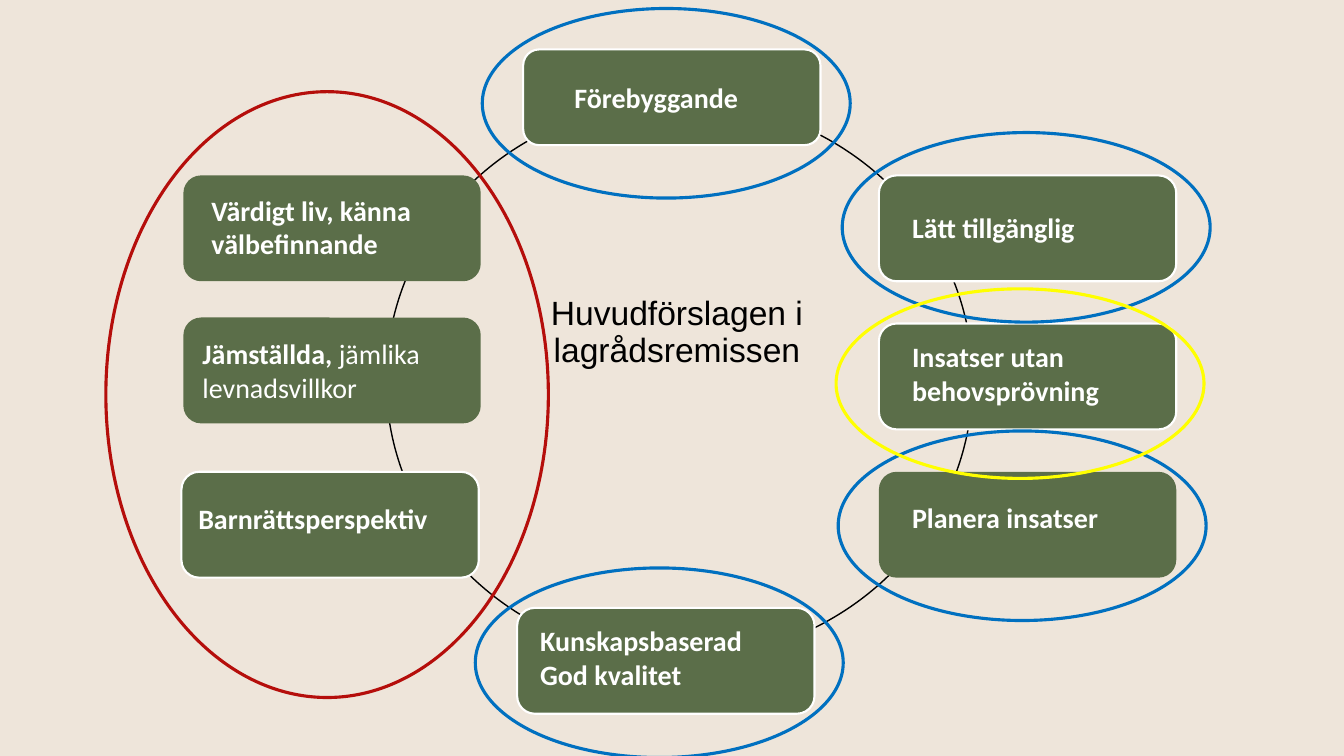
from dataclasses import dataclass

from pptx import Presentation
from pptx.dml.color import RGBColor
from pptx.enum.shapes import MSO_SHAPE as Shape
from pptx.enum.text import PP_ALIGN as Align
from pptx.util import Pt


@dataclass(frozen=True)
class Theme:
    background: str = "EEE5DA"
    card: str = "5B6E49"
    white: str = "FFFFFF"
    black: str = "000000"
    red: str = "B50E0B"
    blue: str = "0070C0"
    yellow: str = "FFFF00"
    title_font: str = "Arial"
    card_font: str = "Calibri"
    title_size: int = 24
    card_size: int = 20
    ring_width: float = 1
    card_border: float = 1.5
    marker_width: float = 2.25


theme = Theme()


def add_outline(kind, area, fill=None, line=None, width=1):
    """Draw a shape; a missing fill or line colour means none."""
    shape = page.shapes.add_shape(kind, *map(Pt, area))
    shape.shadow.inherit = False
    if fill:
        shape.fill.solid()
        shape.fill.fore_color.rgb = RGBColor.from_string(fill)
    else:
        shape.fill.background()
    if line:
        shape.line.color.rgb = RGBColor.from_string(line)
        shape.line.width = Pt(width)
    else:
        shape.line.fill.background()


def add_text(area, lines, font, size, color):
    """Write lines made of (text, bold) spans and return the text frame."""
    frame = page.shapes.add_textbox(*map(Pt, area)).text_frame
    frame.word_wrap = True
    for number, spans in enumerate(lines):
        para = frame.add_paragraph() if number else frame.paragraphs[0]
        for text, bold in spans:
            span = para.add_run()
            span.text = text
            span.font.name = font
            span.font.size = Pt(size)
            span.font.bold = bold
            span.font.color.rgb = RGBColor.from_string(color)
    return frame


deck = Presentation()
deck.slide_width, deck.slide_height = Pt(960), Pt(540)
page = deck.slides.add_slide(deck.slide_layouts[6])
page.background.fill.solid()
page.background.fill.fore_color.rgb = RGBColor.from_string(theme.background)

# Ring and title
add_outline(Shape.OVAL, (275.8, 72, 419, 398.9), line=theme.black, width=theme.ring_width)
title = add_text((377.3, 200, 212.4, 169), [[("Huvudförslagen i lagrådsremissen", False)]],
                 theme.title_font, theme.title_size, theme.black)
title.margin_top = Pt(12)
title.paragraphs[0].alignment = Align.CENTER
title.paragraphs[0].line_spacing = 0.9

# Cards: left, top, height, bordered, text left, text top, text width, lines
card_width, card_height = 212.4, 75.6
right, upper, lower = 627.8, 125.3, 337
cards = [
    (373.7, 35.3, 68.4, True, 403.2, 54, 198.7, [[("Förebyggande", True)]]),
    (right, upper, card_height, True, 644.4, 146.9, 224.6, [[("Lätt tillgänglig", True)]]),
    (right, 231.1, card_height, True, 644.4, 239, 189.4,
     [[("Insatser utan behovsprövning", True)]]),
    (right, lower, card_height, False, 644.4, 354.2, 189.4, [[("Planera insatser", True)]]),
    (369.4, 434.2, card_height, True, 378.7, 442.1, 223.2,
     [[("Kunskapsbaserad", True)], [("God kvalitet", True)]]),
    (129.6, lower, card_height, True, 134.6, 355, 208.8, [[("Barnrättsperspektiv", True)]]),
    (131, 226.8, card_height, False, 137.5, 236.9, 208.8,
     [[("Jämställda, ", True), ("jämlika", False)], [("levnadsvillkor", False)]]),
    (131, upper, card_height, False, 144, 134.6, 208.8,
     [[("Värdigt liv, känna välbefinnande", True)]]),
]
for left, top, height, bordered, text_left, text_top, text_width, lines in cards:
    add_outline(Shape.ROUNDED_RECTANGLE, (left, top, card_width, height), theme.card,
                theme.white if bordered else None, theme.card_border)
    text_height = 55.4 if len(lines) > 1 or len(lines[0][0][0]) > 20 else 31.7
    add_text((text_left, text_top, text_width, text_height), lines,
             theme.card_font, theme.card_size, theme.white)

# Marker ellipses around the cards
marker_size = (262.8, 135.4)
markers = [
    ((75.6, 65.5, 316.1, 432.7), theme.red),
    ((344.5, 6.1, *marker_size), theme.blue),
    ((598.7, 307.8, *marker_size), theme.blue),
    ((601.6, 94.7, *marker_size), theme.blue),
    ((339.5, 405.7, *marker_size), theme.blue),
    ((597.2, 206.3, *marker_size), theme.yellow),
]
for area, color in markers:
    add_outline(Shape.OVAL, area, line=color, width=theme.marker_width)

deck.save("out.pptx")
